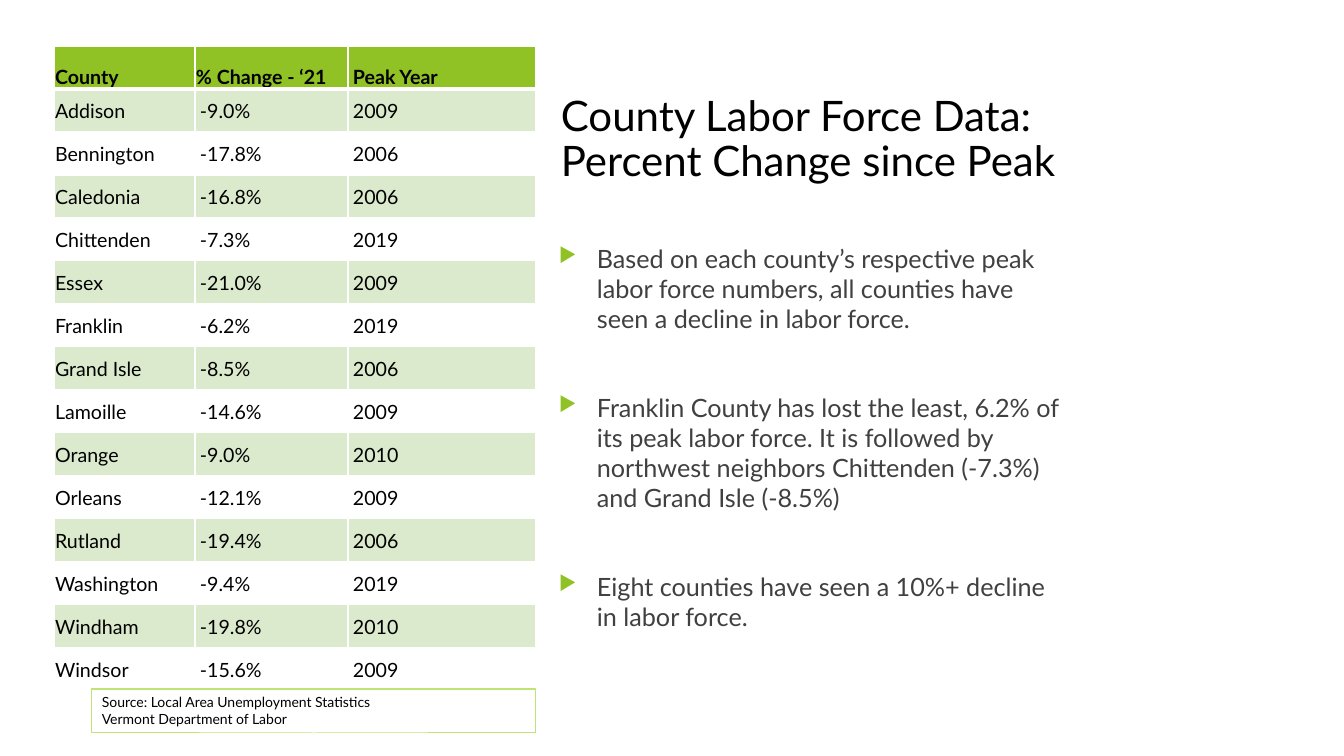
from lxml import etree
from pptx import Presentation
from pptx.dml.color import RGBColor
from pptx.enum.shapes import MSO_SHAPE
from pptx.enum.text import MSO_ANCHOR, PP_ALIGN
from pptx.oxml.ns import qn
from pptx.util import Pt

TOP, MIDDLE, BOTTOM = MSO_ANCHOR.TOP, MSO_ANCHOR.MIDDLE, MSO_ANCHOR.BOTTOM
LEFT = PP_ALIGN.LEFT
RECTANGLE = MSO_SHAPE.RECTANGLE

PX = 914400 / 100.8  # EMU per pixel
GREEN, PALE_GREEN, WHITE, BLACK, GREY = "90C226", "DBE9CD", "FFFFFF", "000000", "404040"


def color(hex_code):
    return RGBColor.from_string(hex_code)


def write(frame, *paragraphs, size, ink=BLACK, bold=False, anchor=TOP,
          line=None, gap=0, bullet=None, indent=0):
    frame.word_wrap = True
    frame.vertical_anchor = anchor
    for i, text in enumerate(paragraphs):
        paragraph = frame.paragraphs[0] if i == 0 else frame.add_paragraph()
        paragraph.text = text
        paragraph.alignment = LEFT
        if bullet:
            props = paragraph._p.get_or_add_pPr()
            props.set("marL", str(round(indent * PX)))
            props.set("indent", str(round(-indent * PX)))
            tint = etree.SubElement(props, qn("a:buClr"))
            etree.SubElement(tint, qn("a:srgbClr"), val=GREEN)
            etree.SubElement(props, qn("a:buSzPct"), val="80000")
            etree.SubElement(props, qn("a:buChar"), char=bullet)
        if line:
            paragraph.line_spacing = line
        paragraph.space_before = Pt(gap if i else 0)
        font = paragraph.font
        font.name, font.size, font.bold = "Lato", Pt(size), bold
        font.color.rgb = color(ink)


presentation = Presentation()
presentation.slide_width, presentation.slide_height = round(1344 * PX), round(756 * PX)
slide = presentation.slides.add_slide(presentation.slide_layouts[6])


# Title
title = slide.shapes.add_textbox(*[round(n * PX) for n in (551, 68, 551, 145)])
write(title.text_frame, "County Labor Force Data: Percent Change since Peak",
      size=30, anchor=MIDDLE, line=0.9)

# Findings
findings = slide.shapes.add_textbox(*[round(n * PX) for n in (549, 238, 521, 451)])
write(findings.text_frame,
      "Based on each county’s respective peak labor force numbers, "
      "all counties have seen a decline in labor force.",
      "Franklin County has lost the least, 6.2% of its peak labor force. It is followed by "
      "northwest neighbors Chittenden (-7.3%) and Grand Isle (-8.5%)",
      "Eight counties have seen a 10%+ decline in labor force.",
      size=18, ink=GREY, gap=41.6, bullet="▶", indent=38)

# County table
counties = [
    ("County", "% Change - ‘21", "Peak Year"),
    ("Addison", "-9.0%", "2009"),
    ("Bennington", "-17.8%", "2006"),
    ("Caledonia", "-16.8%", "2006"),
    ("Chittenden", "-7.3%", "2019"),
    ("Essex", "-21.0%", "2009"),
    ("Franklin", "-6.2%", "2019"),
    ("Grand Isle", "-8.5%", "2006"),
    ("Lamoille", "-14.6%", "2009"),
    ("Orange", "-9.0%", "2010"),
    ("Orleans", "-12.1%", "2009"),
    ("Rutland", "-19.4%", "2006"),
    ("Washington", "-9.4%", "2019"),
    ("Windham", "-19.8%", "2010"),
    ("Windsor", "-15.6%", "2009"),
]
column_widths = (141, 153, 188)
row_height = 43
table = slide.shapes.add_table(
    len(counties), len(column_widths),
    *[round(n * PX) for n in (54, 46, sum(column_widths), row_height * len(counties))]).table
for column, width in zip(table.columns, column_widths):
    column.width = round(width * PX)

for r, county in enumerate(counties):
    table.rows[r].height = round(row_height * PX)
    is_header = r == 0
    for c, value in enumerate(county):
        cell = table.cell(r, c)
        # Numbers and years sit slightly in from the column edge
        is_inset = c == 2 or (c == 1 and not is_header)
        cell.margin_left = round((5 if is_inset else 1) * PX)
        cell.margin_right = cell.margin_top = round(PX)
        cell.margin_bottom = 0
        write(cell.text_frame, value, size=14, bold=is_header)
        cell.vertical_anchor = BOTTOM if is_header else MIDDLE
        # White rules, thicker under the header
        for side in ("L", "R", "T", "B"):
            under_header = (r, side) in ((0, "B"), (1, "T"))
            rule = etree.SubElement(cell._tc.get_or_add_tcPr(), qn(f"a:ln{side}"),
                                    w=str(Pt(3 if under_header else 1)))
            paint = etree.SubElement(rule, qn("a:solidFill"))
            etree.SubElement(paint, qn("a:srgbClr"), val=WHITE)
        cell.fill.solid()
        cell.fill.fore_color.rgb = color(GREEN if is_header else PALE_GREEN if r % 2 else WHITE)

# Source note
source = slide.shapes.add_shape(RECTANGLE, *[round(n * PX) for n in (92, 689, 444, 44)])
source.shadow.inherit = False
source.fill.background()
source.line.color.rgb = color("C0E474")
source.line.width = Pt(0.75)
write(source.text_frame, "Source: Local Area Unemployment Statistics\vVermont Department of Labor",
      size=10)

presentation.save("out.pptx")
